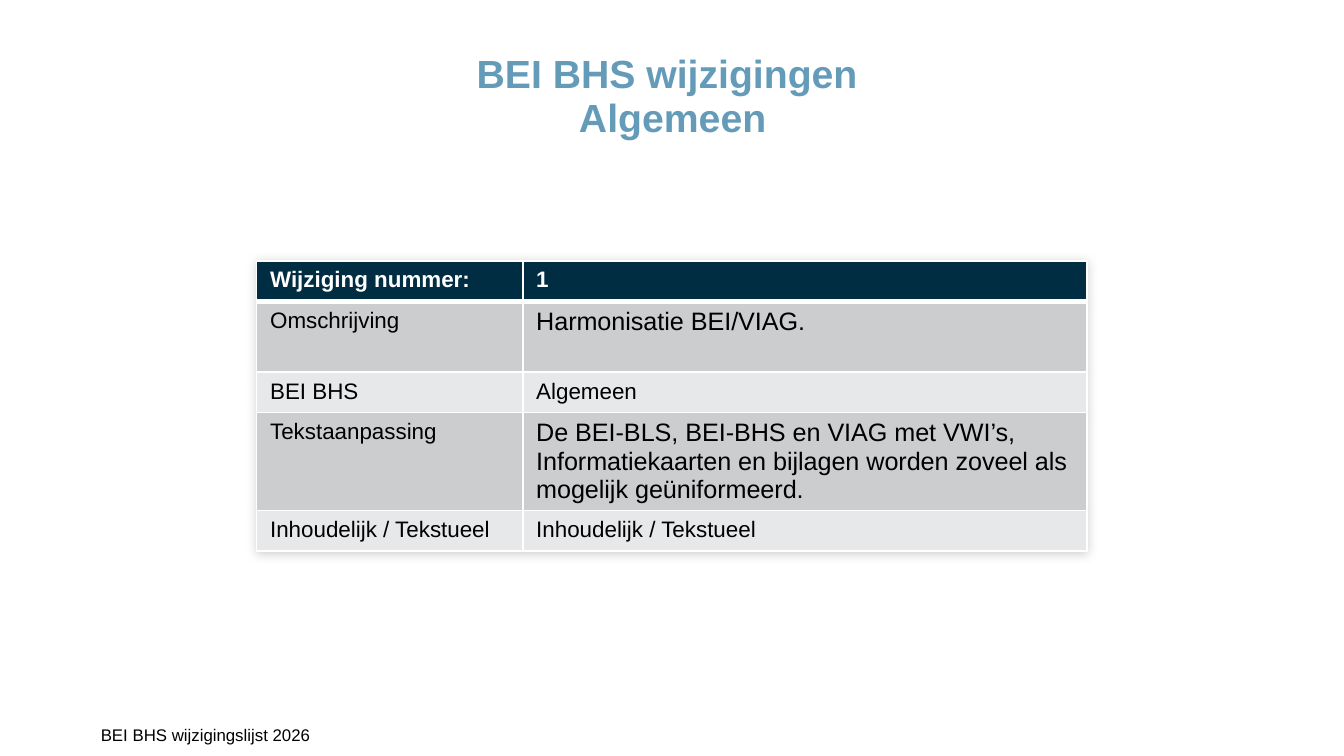
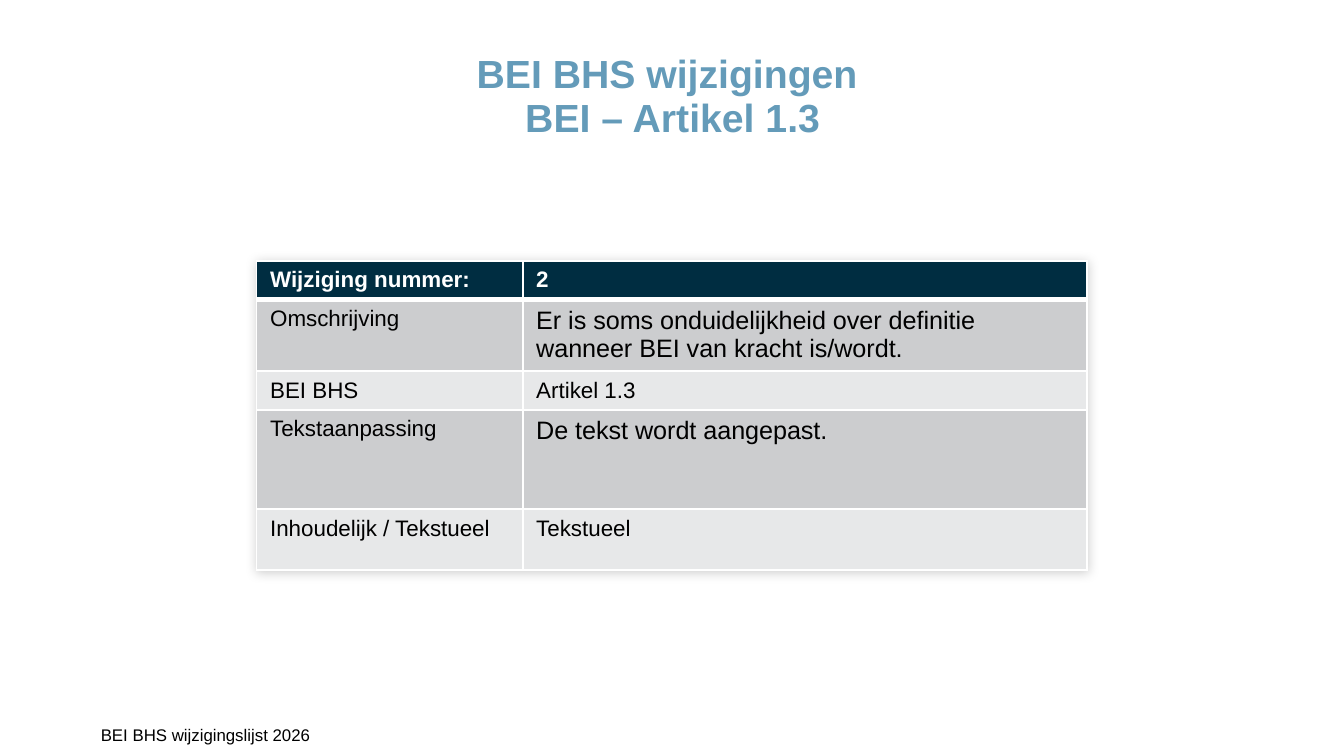
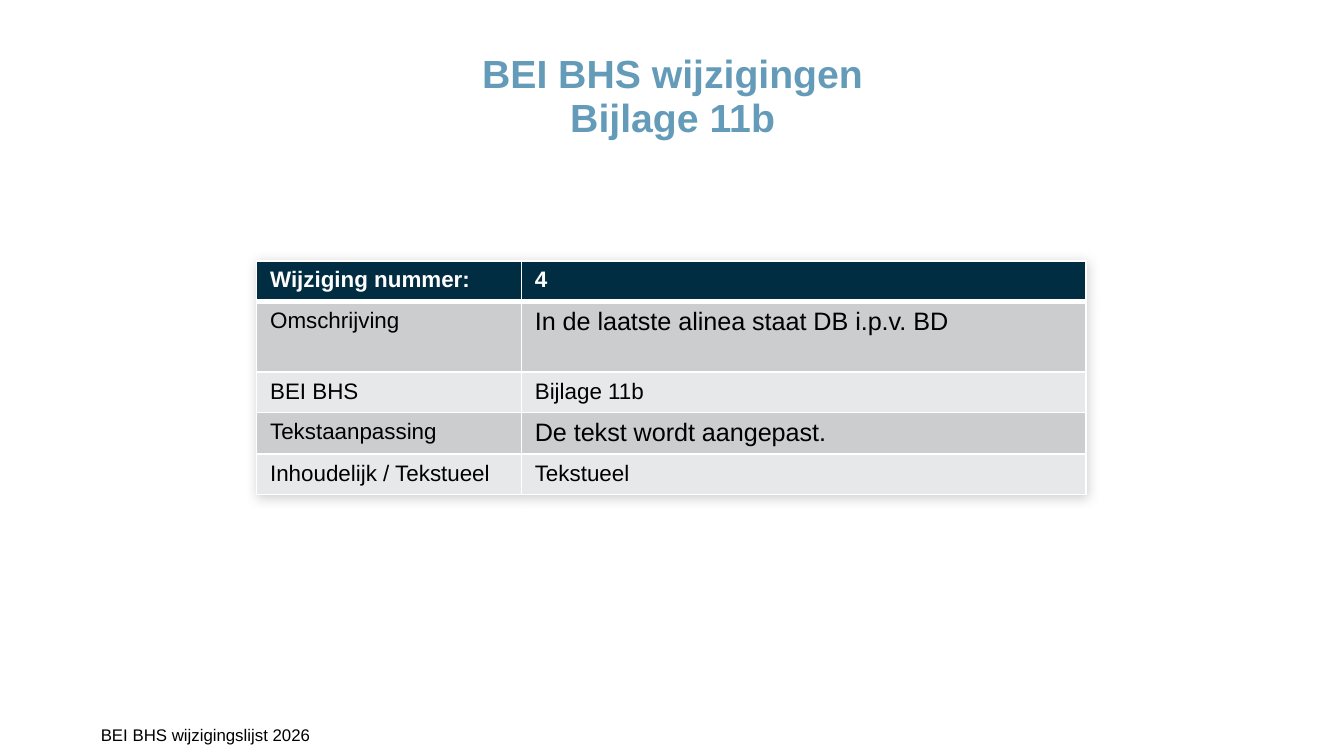
from collections import namedtuple
from dataclasses import dataclass

from lxml.etree import SubElement
from pptx import Presentation
from pptx.dml.color import RGBColor as Rgb
from pptx.enum.text import MSO_ANCHOR as Anchor, PP_ALIGN as Align
from pptx.oxml import parse_xml
from pptx.oxml.ns import nsdecls, qn
from pptx.util import Inches, Pt

Box = namedtuple("Box", "left top width height")
Change = namedtuple("Change", "title number values label_width row_heights")


@dataclass(frozen=True)
class Theme:
    font: str = "Arial"
    title_color: str = "649BB9"
    header_fill: str = "002D41"
    band_fills: tuple = ("CCCDCF", "E7E8E9")
    light: str = "FFFFFF"
    dark: str = "000000"
    title_size: float = 21
    label_size: float = 12
    value_size: float = 13.5
    footer_size: float = 9
    thin_line: float = 1
    thick_line: float = 3


THEME = Theme()
PAGE_WIDTH = Inches(10)
PAGE_HEIGHT = PAGE_WIDTH * 9 // 16
TITLE_BOX = Box(1.91, 0.39, 6.19, 0.94)
TABLE_BOX = Box(1.91, 1.94, 6.19, 2.21)
FOOTER_BOX = Box(0, 5.39, 4.72, 0.24)
FOOTER_INDENT = 0.75
VALUE_WIDTH = 4.2
FOOTER = "BEI BHS wijzigingslijst 2026"
LABELS = ["Wijziging nummer:", "Omschrijving", "BEI BHS", "Tekstaanpassing",
          "Inhoudelijk / Tekstueel"]
LONG_ROWS = (1, 3)
CHANGES = [
    Change("BEI BHS wijzigingen \vAlgemeen", "1",
           ["Harmonisatie BEI/VIAG.", "Algemeen",
            "De BEI-BLS, BEI-BHS en VIAG met VWI’s, Informatiekaarten en bijlagen "
            "worden zoveel als mogelijk geüniformeerd.",
            "Inhoudelijk / Tekstueel"],
           1.98, [0.3, 0.53, 0.3, 0.73, 0.3]),
    Change("BEI BHS wijzigingen \vBEI – Artikel 1.3", "2",
           ["Er is soms onduidelijkheid over definitie wanneer BEI van kracht is/wordt.",
            "Artikel 1.3", "De tekst wordt aangepast.", "Tekstueel"],
           1.98, [0.29, 0.53, 0.29, 0.74, 0.45]),
    Change("BEI BHS wijzigingen\vBijlage 11b", "4",
           ["In de laatste alinea staat DB i.p.v. BD", "Bijlage 11b",
            "De tekst wordt aangepast.", "Tekstueel"],
           1.97, [0.3, 0.53, 0.3, 0.31, 0.3]),
]


def inches(box):
    return [Inches(length) for length in box]


def write(frame, text, size, color, bold=False):
    frame.text = text
    for para in frame.paragraphs:
        for span in para.runs:
            span.font.name = THEME.font
            span.font.size = Pt(size)
            span.font.bold = bold
            span.font.color.rgb = Rgb.from_string(color)


def set_insets(frame, left=0):
    frame.word_wrap = True
    frame.vertical_anchor = Anchor.TOP
    frame.margin_left = Inches(left)
    frame.margin_top = frame.margin_right = frame.margin_bottom = 0


def add_title(page, box, text):
    title = page.shapes.title
    title.left, title.top, title.width, title.height = inches(box)
    frame = title.text_frame
    set_insets(frame)
    write(frame, text, THEME.title_size, THEME.title_color, bold=True)
    frame.paragraphs[0].alignment = Align.CENTER
    frame.paragraphs[0].line_spacing = 0.95


def add_borders(cell, row):
    widths = {"L": THEME.thin_line, "R": THEME.thin_line,
              "T": THEME.thick_line if row == 1 else THEME.thin_line,
              "B": THEME.thick_line if row == 0 else THEME.thin_line}
    properties = cell._tc.get_or_add_tcPr()
    for side, width in widths.items():
        line = SubElement(properties, qn(f"a:ln{side}"), w=str(Pt(width)))
        fill = SubElement(line, qn("a:solidFill"))
        SubElement(fill, qn("a:srgbClr"), val=THEME.light)


def add_shadow(table):
    table._tbl.tblPr.insert(0, parse_xml(
        f'<a:effectLst {nsdecls("a")}>'
        f'<a:outerShdw blurRad="{Pt(6)}" dist="{Pt(1)}" dir="5400000" algn="ctr">'
        f'<a:srgbClr val="{THEME.dark}"><a:alpha val="18000"/></a:srgbClr>'
        '</a:outerShdw></a:effectLst>'))


def style_cell(cell, row, column, text):
    header = row == 0
    size = THEME.value_size if column and row in LONG_ROWS else THEME.label_size
    write(cell.text_frame, text, size, THEME.light if header else THEME.dark, header)
    add_borders(cell, row)
    fill = THEME.header_fill if header else THEME.band_fills[(row - 1) % 2]
    cell.fill.solid()
    cell.fill.fore_color.rgb = Rgb.from_string(fill)


def add_change_table(page, box, change):
    table = page.shapes.add_table(len(LABELS), 2, *inches(box)).table
    table.horz_banding = False
    add_shadow(table)
    for column, width in zip(table.columns, (change.label_width, VALUE_WIDTH)):
        column.width = Inches(width)
    for row, height in zip(table.rows, change.row_heights):
        row.height = Inches(height)
    for row, texts in enumerate(zip(LABELS, [change.number, *change.values])):
        for column, text in enumerate(texts):
            style_cell(table.cell(row, column), row, column, text)


def add_footer(page, box):
    frame = page.shapes.add_textbox(*inches(box)).text_frame
    set_insets(frame, left=FOOTER_INDENT)
    write(frame, FOOTER, THEME.footer_size, THEME.dark)


def add_change_page(deck, change):
    page = deck.slides.add_slide(deck.slide_layouts.get_by_name("Title Only"))
    add_title(page, TITLE_BOX, change.title)
    size = {"width": change.label_width + VALUE_WIDTH, "height": sum(change.row_heights)}
    add_change_table(page, TABLE_BOX._replace(**size), change)
    add_footer(page, FOOTER_BOX)


def main():
    deck = Presentation()
    deck.slide_width, deck.slide_height = PAGE_WIDTH, PAGE_HEIGHT
    for change in CHANGES:
        add_change_page(deck, change)
    deck.save("out.pptx")


if __name__ == "__main__":
    main()
